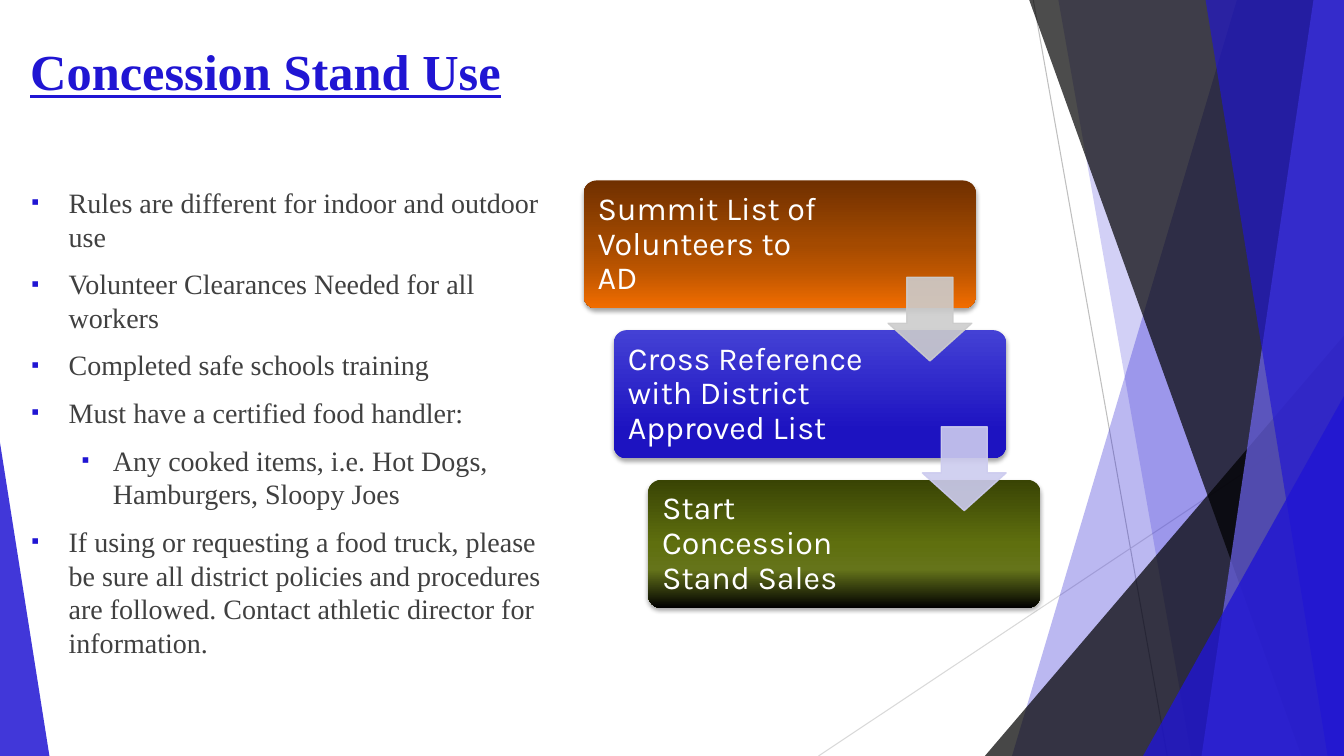
from dataclasses import dataclass
from lxml.etree import SubElement
from pptx import Presentation
from pptx.dml.color import RGBColor
from pptx.enum.shapes import MSO_CONNECTOR, MSO_SHAPE
from pptx.enum.text import MSO_ANCHOR, MSO_AUTO_SIZE, PP_ALIGN
from pptx.oxml.ns import qn
from pptx.util import Inches, Pt


@dataclass(frozen=True)
class Theme:
    blue: str = "2015D3"
    pale: str = "6F67F0"
    black: str = "000000"
    white: str = "FFFFFF"
    ink: str = "404040"
    serif: str = "Times New Roman"
    sans: str = "Karla"
    title: int = 36
    body: int = 20
    card: int = 23


THEME = Theme()
WIDE, HIGH = Inches(13.33), Inches(7.5)
CARD_W, CARD_H, STEP = 29.18, 16.93, 19.8

RULES = [
    ("Rules are different for indoor and outdoor use", 0),
    ("Volunteer Clearances Needed for all workers", 0),
    ("Completed safe schools training", 0),
    ("Must have a certified food handler:", 0),
    ("Any cooked items, i.e. Hot Dogs, Hamburgers, Sloopy Joes", 1),
    ("If using or requesting a food truck, please be sure all district "
     "policies and procedures are followed. Contact athletic director for "
     "information.", 0),
]
STEPS = [
    ("Summit List of Volunteers to AD", 43.43, 18.83,
     [(0, "703000"), (50, "A44A00"), (70, "BC5500"), (100, "F26D00")]),
    ("Cross Reference with District Approved List", 45.68, 19.8,
     [(0, "4441D5"), (78, "1D13C1")]),
    ("Start Concession Stand Sales", 48.23, 19.8,
     [(0, "394404"), (50, "5F6F0F"), (70, "65741A"), (100, "000000")]),
]


def across(share):
    return round(WIDE * share / 100)


def down(share):
    return round(HIGH * share / 100)


def box(x, y, w, h):
    return across(x), down(y), across(w), down(h)


def rgb(code):
    return RGBColor.from_string(code)


def node(parent, tag, **attrs):
    return SubElement(parent, qn(tag), {k: str(v) for k, v in attrs.items()})


def fade(fill, alpha):
    node(fill.find(qn("a:srgbClr")), "a:alpha", val=alpha * 1000)


def paint(shape, color, alpha=100):
    shape.shadow.inherit = False
    shape.fill.solid()
    shape.fill.fore_color.rgb = rgb(color)
    shape.line.fill.background()
    fade(shape._element.spPr.find(qn("a:solidFill")), alpha)


def blend(shape, stops):
    shape.fill.gradient()
    shape.fill.gradient_angle = 270
    items = shape._element.spPr.find(qn("a:gradFill")).find(qn("a:gsLst"))
    items.clear()
    for spot, color in stops:
        node(node(items, "a:gs", pos=spot * 1000), "a:srgbClr", val=color)


def shade(shape):
    shape.shadow.inherit = False
    shape.line.fill.background()
    drop = node(shape._element.spPr.find(qn("a:effectLst")), "a:outerShdw",
                blurRad=Pt(3), dist=Pt(2), dir=5400000, rotWithShape=0)
    node(node(drop, "a:srgbClr", val=THEME.black), "a:alpha", val=35000)


def write(para, text, font, size, color, bold=False, under=False, **space):
    para.alignment = PP_ALIGN.LEFT
    for name, value in space.items():
        setattr(para, name, value)
    run = para.add_run()
    run.text = text
    run.font.name, run.font.size = font, Pt(size)
    run.font.color.rgb = rgb(color)
    run.font.bold, run.font.underline = bold, under


def bullet(para, left, hang):
    props = para._p.get_or_add_pPr()
    props.set("marL", str(Inches(left)))
    props.set("indent", str(-Inches(hang)))
    node(node(props, "a:buClr"), "a:srgbClr", val=THEME.blue)
    node(props, "a:buSzPct", val=80000)
    node(props, "a:buFont", typeface=THEME.serif)
    node(props, "a:buChar", char="▪")


def sheet(slide, top, foot, color, alpha):
    edge = [(100, 0), (100, 100), (foot, 100)]
    draft = slide.shapes.build_freeform(across(top), 0)
    draft.add_line_segments([(across(x), down(y)) for x, y in edge])
    paint(draft.convert_to_shape(), color, alpha)


def wedge(slide, x, y, w, lean, color, alpha):
    shape = slide.shapes.add_shape(MSO_SHAPE.ISOSCELES_TRIANGLE,
                                   *box(x, y, w, 100 - y))
    shape.adjustments[0] = lean
    paint(shape, color, alpha)


def ray(slide, x, y, foot, color):
    line = slide.shapes.add_connector(MSO_CONNECTOR.STRAIGHT, across(x),
                                      down(y), across(foot), HIGH)
    line.line.color.rgb = rgb(color)
    line.line.width = Pt(0.75)
    node(line._element.spPr, "a:effectLst")


def decor(slide):
    ray(slide, 76.88, 0, 86.85, "BFBFBF")
    ray(slide, 100, 53.73, 60.9, "D9D9D9")
    sheet(slide, 92.03, 75.3, THEME.blue, 30)
    sheet(slide, 78.75, 88.65, THEME.blue, 20)
    wedge(slide, 73.28, 44.4, 26.72, 1, THEME.black, 72)
    sheet(slide, 76.58, 96.83, THEME.black, 70)
    sheet(slide, 97.73, 89.4, THEME.pale, 70)
    sheet(slide, 89.7, 98.78, THEME.blue, 65)
    wedge(slide, 85.05, 52.4, 14.95, 1, THEME.blue, 80)
    wedge(slide, 0, 58.53, 3.68, 0, THEME.blue, 85)


def seat(slide, holder, *area):
    slide.shapes._spTree.append(holder._element)
    holder.left, holder.top, holder.width, holder.height = box(*area)
    frame = holder.text_frame
    frame.auto_size = MSO_AUTO_SIZE.NONE
    frame.vertical_anchor = MSO_ANCHOR.TOP
    frame.word_wrap = True
    return frame


def head(slide):
    frame = seat(slide, slide.shapes.title, 1.5, 4.67, 70.5, 14.4)
    write(frame.paragraphs[0], "Concession Stand Use", THEME.serif,
          THEME.title, THEME.blue, bold=True, under=True)


def rules(slide):
    frame = seat(slide, slide.placeholders[1], 1.58, 23.87, 40.13, 67.2)
    for spot, (text, level) in enumerate(RULES):
        para = frame.add_paragraph() if spot else frame.paragraphs[0]
        write(para, text, THEME.serif, THEME.body, THEME.ink,
              level=level, space_before=Pt(10))
        bullet(para, *((0.81, 0.31) if level else (0.37, 0.37)))


def card(slide, text, x, y, wide, stops):
    shape = slide.shapes.add_shape(MSO_SHAPE.ROUNDED_RECTANGLE,
                                   *box(x, y, CARD_W, CARD_H))
    shape.adjustments[0] = 0.1
    blend(shape, stops)
    shade(shape)
    frame = slide.shapes.add_textbox(*box(x + 0.3, y + 0.5, wide, 16)).text_frame
    frame.word_wrap = True
    frame.vertical_anchor = MSO_ANCHOR.MIDDLE
    frame.margin_top = frame.margin_bottom = Inches(0.1)
    write(frame.paragraphs[0], text, THEME.sans, THEME.card, THEME.white,
          line_spacing=0.9)


def arrow(slide, x, y, color):
    shape = slide.shapes.add_shape(MSO_SHAPE.DOWN_ARROW, *box(x, y, 6.23, 11.07))
    shape.adjustments[0], shape.adjustments[1] = 0.55, 0.45
    paint(shape, color, 90)
    shape.line.color.rgb = rgb(color)
    shape.line.width = Pt(1)
    fade(shape.line._ln.find(qn("a:solidFill")), 90)


def flow(slide):
    tops = [23.87 + STEP * spot for spot in range(len(STEPS))]
    for (text, x, wide, stops), y in zip(STEPS, tops):
        card(slide, text, x, y, wide, stops)
    for (_, x, _, _), y, color in zip(STEPS[1:], tops[1:], ("CCCCCC", "CDCCEF")):
        arrow(slide, x + 20.4, y - 7, color)


def main():
    deck = Presentation()
    deck.slide_width, deck.slide_height = WIDE, HIGH
    slide = deck.slides.add_slide(deck.slide_layouts[1])
    decor(slide)
    head(slide)
    rules(slide)
    flow(slide)
    deck.save("out.pptx")


if __name__ == "__main__":
    main()
